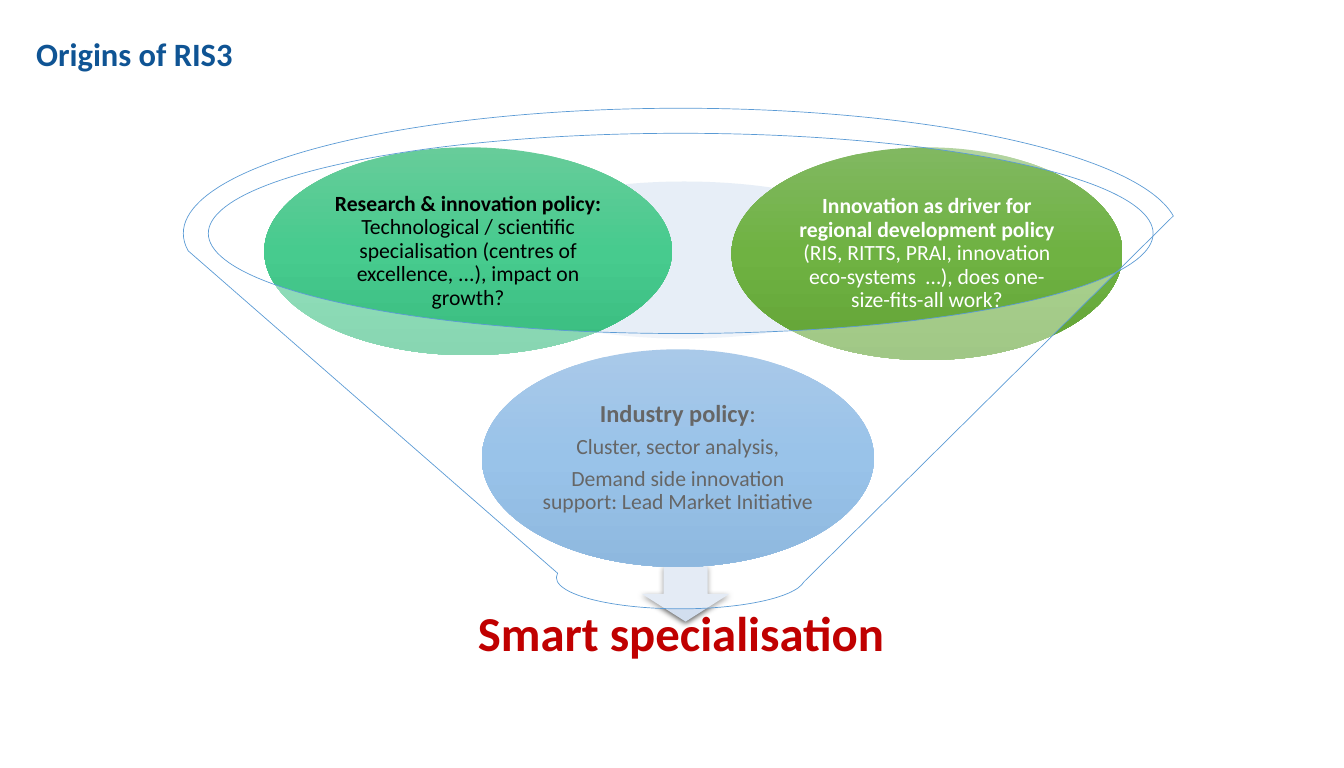
import copy

import pptx
import pptx.dml.color
import pptx.enum.shapes
import pptx.enum.text
import pptx.oxml
import pptx.oxml.ns
import pptx.util

Inches, Pt = pptx.util.Inches, pptx.util.Pt
RGBColor = pptx.dml.color.RGBColor
SHAPE = pptx.enum.shapes.MSO_SHAPE
ALIGN = pptx.enum.text.PP_ALIGN
ANCHOR = pptx.enum.text.MSO_ANCHOR
qn = pptx.oxml.ns.qn

FONT = "Calibri"
BLACK = RGBColor(0x00, 0x00, 0x00)
WHITE = RGBColor(0xFF, 0xFF, 0xFF)
TITLE_BLUE = RGBColor(0x0F, 0x54, 0x94)
RESULT_RED = RGBColor(0xC0, 0x00, 0x00)
RIM_BLUE = RGBColor(0xC4, 0xD5, 0xEB)
ARROW_BLUE = RGBColor(0xD2, 0xDE, 0xEF)
FUNNEL_LINE = RGBColor(0x5B, 0x9B, 0xD5)
BLUES = [RGBColor.from_string(c) for c in ("71A6DB", "559BDB", "448ACA")]
MINTS = [RGBColor.from_string(c) for c in ("67CC9A", "47CB8E", "39BB7F")]
GREENS = [RGBColor.from_string(c) for c in ("81B861", "6FB242", "62A336")]

# Content: runs are (text, size, bold)
TITLE = [[("Origins of RIS3", 24, True)]]
RESULT = [[("Smart specialisation", 36, True)]]
POLICIES = [  # box, gradient, text colour, inset, paragraphs
    ((4.94, 3.58, 4.02, 2.23), BLUES, BLACK, 0.03, [
        [("Industry policy", 18, True), (":", 18, False)],
        [("Cluster, sector analysis,", 16, False)],
        [("Demand side innovation support: Lead Market Initiative", 16, False)],
    ]),
    ((2.71, 1.51, 4.18, 2.13), MINTS, BLACK, 0.02, [
        [("Research & innovation policy: ", 16, True),
         ("Technological / scientific specialisation (centres of excellence, ...), "
          "impact on growth?", 16, False)],
    ]),
    ((7.5, 1.51, 4.01, 2.18), GREENS, WHITE, 0.02, [
        [("Innovation as driver for regional development policy ", 16, True),
         ("(RIS, RITTS, PRAI, innovation eco-systems  …), "
          "does one-size-fits-all work?", 16, False)],
    ]),
]


def write(sp, paragraphs, color, margins, align=ALIGN.CENTER,
          anchor=ANCHOR.MIDDLE, spacing=0.9):
    tf = sp.text_frame
    tf.word_wrap = True
    tf.vertical_anchor = anchor
    tf.margin_left = tf.margin_right = Inches(margins[0])
    tf.margin_top = tf.margin_bottom = Inches(margins[1])
    for i, runs in enumerate(paragraphs):
        p = tf.add_paragraph() if i else tf.paragraphs[0]
        p.alignment = align
        p.line_spacing = spacing
        p.space_before = Pt(0)
        p.space_after = Pt(6) if i < len(paragraphs) - 1 else Pt(0)
        for text, size, bold in runs:
            r = p.add_run()
            r.text = text
            r.font.name, r.font.size, r.font.bold = FONT, Pt(size), bold
            r.font.color.rgb = color


def add_shape(slide, kind, box, color=None, alpha=None):
    sp = slide.shapes.add_shape(kind, *map(Inches, box))
    sp.shadow.inherit = False
    sp.line.fill.background()
    if color is not None:
        sp.fill.solid()
        sp.fill.fore_color.rgb = color
    if alpha is not None:
        clr = sp._element.spPr.find(".//" + qn("a:srgbClr"))
        clr.append(pptx.oxml.parse_xml(
            f'<a:alpha {pptx.oxml.ns.nsdecls("a")} val="{alpha * 1000}"/>'))
    return sp


def set_gradient(sp, colors):
    sp.fill.gradient()
    sp.fill.gradient_angle = 270
    stops = sp._element.spPr.find(".//" + qn("a:gsLst"))
    stops.insert(1, copy.deepcopy(stops[0]))
    for i, (stop, color) in enumerate(zip(sp.fill.gradient_stops, colors)):
        stop.position = i / 2
        stop.color.rgb = color


def add_drop_shadow(sp):
    effects = sp._element.spPr.find(qn("a:effectLst"))
    effects.append(pptx.oxml.parse_xml(
        f'<a:outerShdw {pptx.oxml.ns.nsdecls("a")} blurRad="{Pt(4.5)}" '
        f'dist="{Pt(1.5)}" dir="5400000" algn="ctr" rotWithShape="0">'
        '<a:srgbClr val="000000"><a:alpha val="63000"/></a:srgbClr></a:outerShdw>'))


def main():
    prs = pptx.Presentation()
    prs.slide_width, prs.slide_height = Inches(13.78), Inches(7.87)
    slide = prs.slides.add_slide(prs.slide_layouts[5])

    # Title
    title = slide.shapes.title
    title.left, title.top, title.width, title.height = map(
        Inches, (0.27, 0.3, 11.86, 0.49))
    write(title, TITLE, TITLE_BLUE, (0.1, 0.05), ALIGN.LEFT, ANCHOR.TOP, 1.0)

    # Funnel mouth, arrow and result
    add_shape(slide, SHAPE.OVAL, (4.7, 1.86, 4.63, 1.61), RIM_BLUE, 40)
    arrow = add_shape(slide, SHAPE.DOWN_ARROW, (6.58, 5.8, 0.9, 0.57), ARROW_BLUE)
    add_drop_shadow(arrow)
    result = slide.shapes.add_textbox(*map(Inches, (3.12, 6.25, 7.73, 0.52)))
    write(result, RESULT, RESULT_RED, (0.28, 0.28))

    # Policies that go into the funnel
    for box, colors, text_color, inset, paragraphs in POLICIES:
        oval = add_shape(slide, SHAPE.OVAL, box)
        set_gradient(oval, colors)
        write(oval, paragraphs, text_color, (inset, inset))

    # Translucent funnel in front
    funnel = add_shape(slide, SHAPE.FUNNEL, (1.88, 1.11, 10.2, 5.13), WHITE, 40)
    funnel.line.color.rgb = FUNNEL_LINE
    funnel.line.width = Pt(0.5)

    prs.save("out.pptx")


if __name__ == "__main__":
    main()
